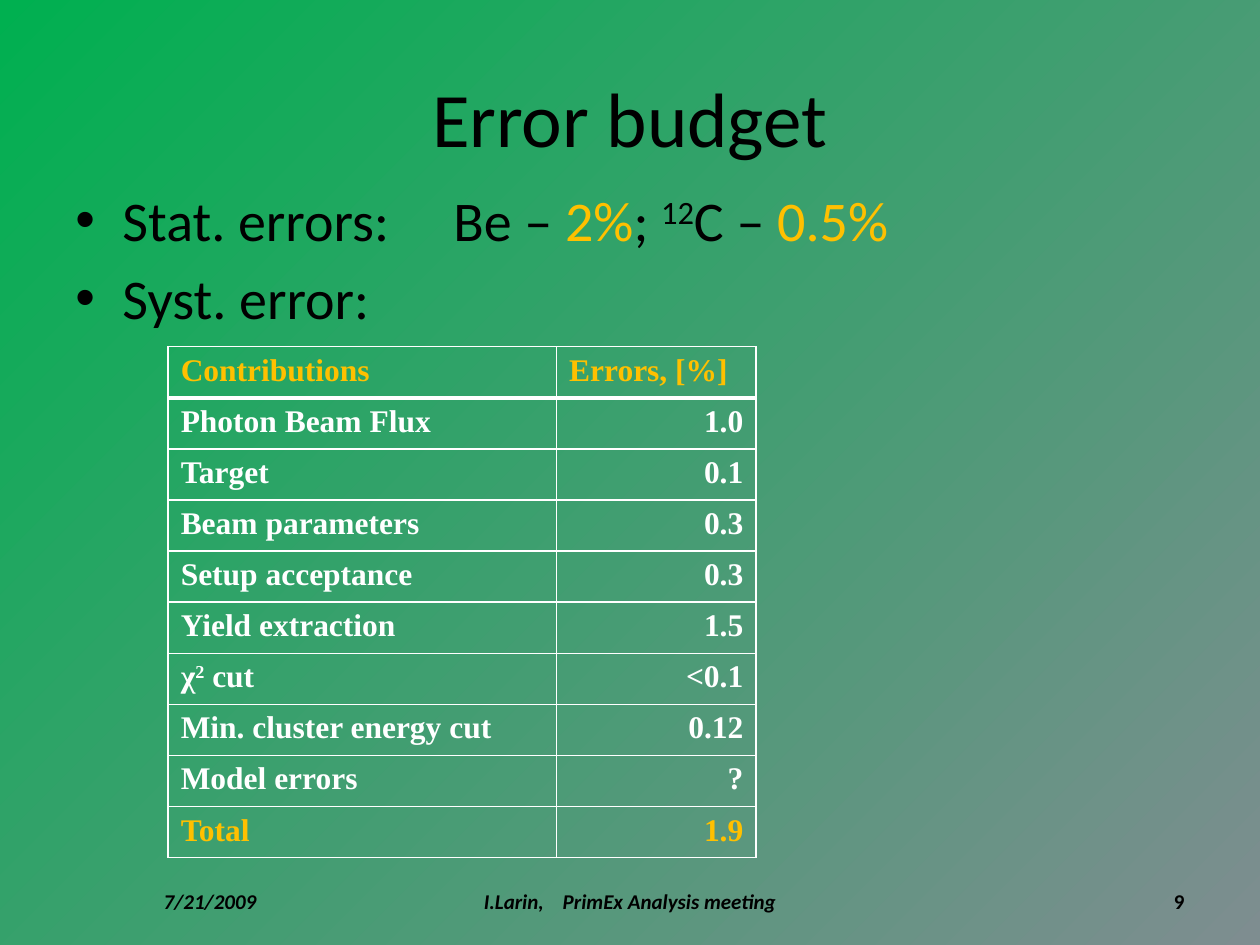
from lxml.etree import SubElement
from pptx import Presentation
from pptx.dml.color import RGBColor
from pptx.enum.text import MSO_ANCHOR as Anchor, PP_ALIGN as Align
from pptx.oxml.ns import qn
from pptx.util import Cm, Pt

BLACK = RGBColor(0x00, 0x00, 0x00)
WHITE = RGBColor(0xFF, 0xFF, 0xFF)
GOLD = RGBColor(0xFF, 0xC0, 0x00)
GREEN = RGBColor(0x00, 0xB0, 0x50)
GREY = RGBColor(0x7E, 0x8D, 0x90)

CONTRIBUTIONS = [
    ("Contributions", "Errors, [%]"),
    ("Photon Beam Flux", "1.0"),
    ("Target", "0.1"),
    ("Beam parameters", "0.3"),
    ("Setup acceptance", "0.3"),
    ("Yield extraction", "1.5"),
    ("χ² cut", "<0.1"),
    ("Min. cluster energy cut", "0.12"),
    ("Model errors", "?"),
    ("Total", "1.9"),
]
COLUMN_WIDTHS = (Cm(7.83), Cm(4.02))
ROW_HEIGHT = Cm(1.03)


def add_run(paragraph, text, *, size=12, font="Calibri", color=BLACK, bold=False,
            italic=False, superscript=False, spacing=None):
    """Append a formatted run; spacing is extra width per character in points."""
    run = paragraph.add_run()
    run.text = text
    run.font.size = Pt(size)
    run.font.name = font
    run.font.color.rgb = color
    run.font.bold = bold
    run.font.italic = italic
    properties = run._r.get_or_add_rPr()
    if superscript:
        properties.set("baseline", "30000")
    if spacing:
        properties.set("spc", str(round(spacing * 100)))


def set_background(slide):
    fill = slide.background.fill
    fill.gradient()
    fill.gradient_angle = 315
    for stop, color in zip(fill.gradient_stops, (GREEN, GREY)):
        stop.color.rgb = color


def set_title(slide, text):
    title = slide.shapes.title
    title.left, title.top, title.width, title.height = Cm(1.27), Cm(0.76), Cm(22.86), Cm(3.18)
    title.text_frame.vertical_anchor = Anchor.MIDDLE
    paragraph = title.text_frame.paragraphs[0]
    paragraph.alignment = Align.CENTER
    add_run(paragraph, text, size=44)


def add_text_box(slide, left, top, width, height, anchor=Anchor.TOP):
    frame = slide.shapes.add_textbox(left, top, width, height).text_frame
    frame.word_wrap = True
    frame.vertical_anchor = anchor
    return frame


def add_bullet(paragraph):
    properties = paragraph._p.get_or_add_pPr()
    properties.set("marL", str(Cm(0.95)))
    properties.set("indent", str(-Cm(0.95)))
    SubElement(properties, qn("a:buFont")).set("typeface", "Arial")
    SubElement(properties, qn("a:buChar")).set("char", "•")


def add_error_list(slide):
    frame = add_text_box(slide, Cm(1.27), Cm(3.61), Cm(22.86), Cm(4.65))
    statistical = frame.paragraphs[0]
    add_bullet(statistical)
    add_run(statistical, "Stat. errors: \tBe – ", size=32)
    add_run(statistical, "2%", size=32, color=GOLD)
    add_run(statistical, "; ", size=32)
    add_run(statistical, "12", size=32, superscript=True)
    add_run(statistical, "C – ", size=32)
    add_run(statistical, "0.5%", size=32, color=GOLD)

    systematic = frame.add_paragraph()
    add_bullet(systematic)
    systematic.space_before = Pt(6.4)
    add_run(systematic, "Syst. error:", size=32)


def set_borders(cell, top, bottom):
    properties = cell._tc.get_or_add_tcPr()
    for side, width in (("L", 1), ("R", 1), ("T", top), ("B", bottom)):
        line = SubElement(properties, qn(f"a:ln{side}"), w=str(Pt(width)))
        solid = SubElement(line, qn("a:solidFill"))
        SubElement(solid, qn("a:srgbClr"), val=str(WHITE))


def fill_cell(cell, text, color, alignment):
    paragraph = cell.text_frame.paragraphs[0]
    paragraph.alignment = alignment
    base, square, rest = text.partition("²")
    for part, raised in ((base, False), ("2" if square else "", True), (rest, False)):
        if part:
            add_run(paragraph, part, size=18, font="Times New Roman", color=color,
                    bold=True, superscript=raised)


def add_contribution_table(slide):
    row_count = len(CONTRIBUTIONS)
    table = slide.shapes.add_table(row_count, len(COLUMN_WIDTHS), Cm(3.39), Cm(6.99),
                                   sum(COLUMN_WIDTHS), ROW_HEIGHT * row_count).table
    table.first_row = table.horz_banding = False
    for column, width in zip(table.columns, COLUMN_WIDTHS):
        column.width = width
    for row, texts in enumerate(CONTRIBUTIONS):
        table.rows[row].height = ROW_HEIGHT
        color = GOLD if row in (0, row_count - 1) else WHITE
        for column, text in enumerate(texts):
            cell = table.cell(row, column)
            alignment = Align.RIGHT if row and column else Align.LEFT
            fill_cell(cell, text, color, alignment)
            set_borders(cell, top=3 if row == 1 else 1, bottom=3 if row == 0 else 1)
            cell.fill.background()


def add_footer(slide, left, width, alignment):
    frame = add_text_box(slide, left, Cm(17.65), width, Cm(1.02), Anchor.MIDDLE)
    paragraph = frame.paragraphs[0]
    paragraph.alignment = alignment
    return paragraph


def main():
    presentation = Presentation()
    presentation.slide_width, presentation.slide_height = Cm(25.4), Cm(19.05)
    slide = presentation.slides.add_slide(presentation.slide_layouts[5])
    set_background(slide)
    set_title(slide, "Error budget")
    add_error_list(slide)

    date = add_footer(slide, Cm(1.27), Cm(5.93), Align.CENTER)
    add_run(date, "7/21/2009", bold=True, italic=True)
    meeting = add_footer(slide, Cm(8.68), Cm(8.04), Align.CENTER)
    add_run(meeting, "I.Larin,", bold=True, italic=True)
    add_run(meeting, " ", bold=True, italic=True, spacing=8)
    add_run(meeting, "PrimEx Analysis meeting", bold=True, italic=True)
    number = add_footer(slide, Cm(18.2), Cm(5.93), Align.RIGHT)
    add_run(number, "9", bold=True)

    add_contribution_table(slide)
    presentation.save("out.pptx")


if __name__ == "__main__":
    main()
